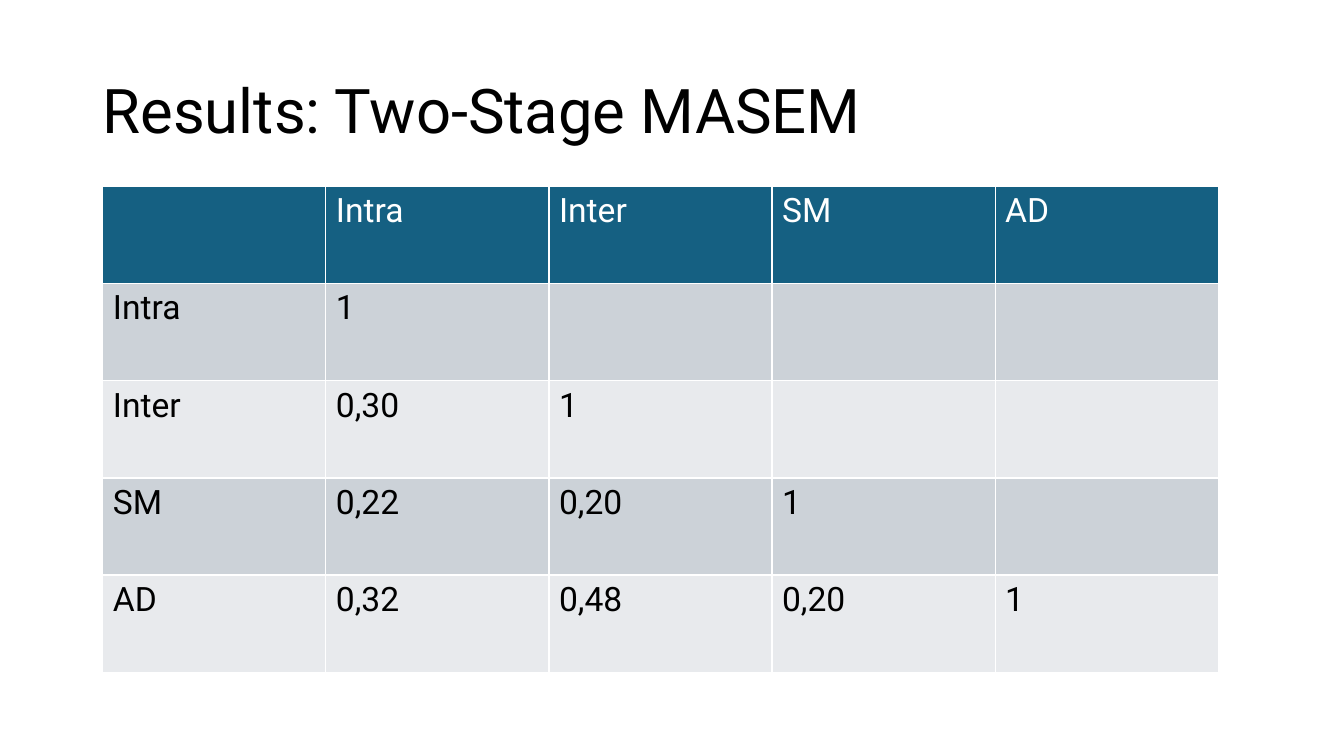
import dataclasses

import lxml.etree
import pptx
import pptx.dml.color
import pptx.enum.text
import pptx.oxml.ns
import pptx.util


@dataclasses.dataclass(frozen=True)
class Theme:
    font: str = "Roboto"
    title_size: int = 44
    cell_size: int = 24
    border_width: int = 1
    text: str = "000000"
    header_text: str = "FFFFFF"
    header_fill: str = "156082"
    bands: tuple = ("CCD2D8", "E8EAED")
    border: str = "FFFFFF"


THEME = Theme()
SLIDE_W, SLIDE_H = pptx.util.Inches(13.333), pptx.util.Inches(7.5)
COL_W, ROW_H = pptx.util.Inches(2.213), pptx.util.Inches(0.964)
TABLE_LEFT, TABLE_TOP = pptx.util.Inches(1.02), pptx.util.Inches(1.85)

VARIABLES = ["Intra", "Inter", "SM", "AD"]
# Lower triangle of the correlation matrix
CORRELATIONS = [
    ["1"],
    ["0,30", "1"],
    ["0,22", "0,20", "1"],
    ["0,32", "0,48", "0,20", "1"],
]


def rgb(value):
    return pptx.dml.color.RGBColor.from_string(value)


def add_run(p, text, size, color):
    r = p.add_run()
    r.text = text
    r.font.name = THEME.font
    r.font.size = pptx.util.Pt(size)
    r.font.color.rgb = rgb(color)


def add_title(slide, text):
    box = slide.shapes.add_textbox(
        pptx.util.Inches(0.92), pptx.util.Inches(0.4),
        pptx.util.Inches(11.5), pptx.util.Inches(1.45))
    tf = box.text_frame
    tf.word_wrap = True
    tf.vertical_anchor = pptx.enum.text.MSO_ANCHOR.MIDDLE
    p = tf.paragraphs[0]
    p.line_spacing = 0.9
    add_run(p, text, THEME.title_size, THEME.text)


def set_borders(cell):
    props = cell._tc.get_or_add_tcPr()
    qn = pptx.oxml.ns.qn
    for side in ("a:lnL", "a:lnR", "a:lnT", "a:lnB"):
        line = lxml.etree.SubElement(
            props, qn(side), w=str(pptx.util.Pt(THEME.border_width)))
        fill = lxml.etree.SubElement(line, qn("a:solidFill"))
        lxml.etree.SubElement(fill, qn("a:srgbClr"), val=THEME.border)


def style_cell(cell, text, fill, color):
    set_borders(cell)
    cell.fill.solid()
    cell.fill.fore_color.rgb = rgb(fill)
    if text:
        add_run(cell.text_frame.paragraphs[0], text, THEME.cell_size, color)


def add_matrix(slide, names, values):
    size = len(names) + 1
    table = slide.shapes.add_table(
        size, size, TABLE_LEFT, TABLE_TOP, COL_W * size, ROW_H * size).table
    for column in table.columns:
        column.width = COL_W
    for row in table.rows:
        row.height = ROW_H

    # Header row
    for col, text in enumerate([""] + names):
        style_cell(table.cell(0, col), text, THEME.header_fill, THEME.header_text)

    # Banded body rows, blank above the diagonal
    for i, (name, known) in enumerate(zip(names, values)):
        texts = [name] + known + [""] * (len(names) - len(known))
        for col, text in enumerate(texts):
            style_cell(table.cell(i + 1, col), text, THEME.bands[i % 2], THEME.text)


def main():
    prs = pptx.Presentation()
    prs.slide_width, prs.slide_height = SLIDE_W, SLIDE_H
    slide = prs.slides.add_slide(prs.slide_layouts[6])
    add_title(slide, "Results: Two-Stage MASEM")
    add_matrix(slide, VARIABLES, CORRELATIONS)
    prs.save("out.pptx")


if __name__ == "__main__":
    main()
